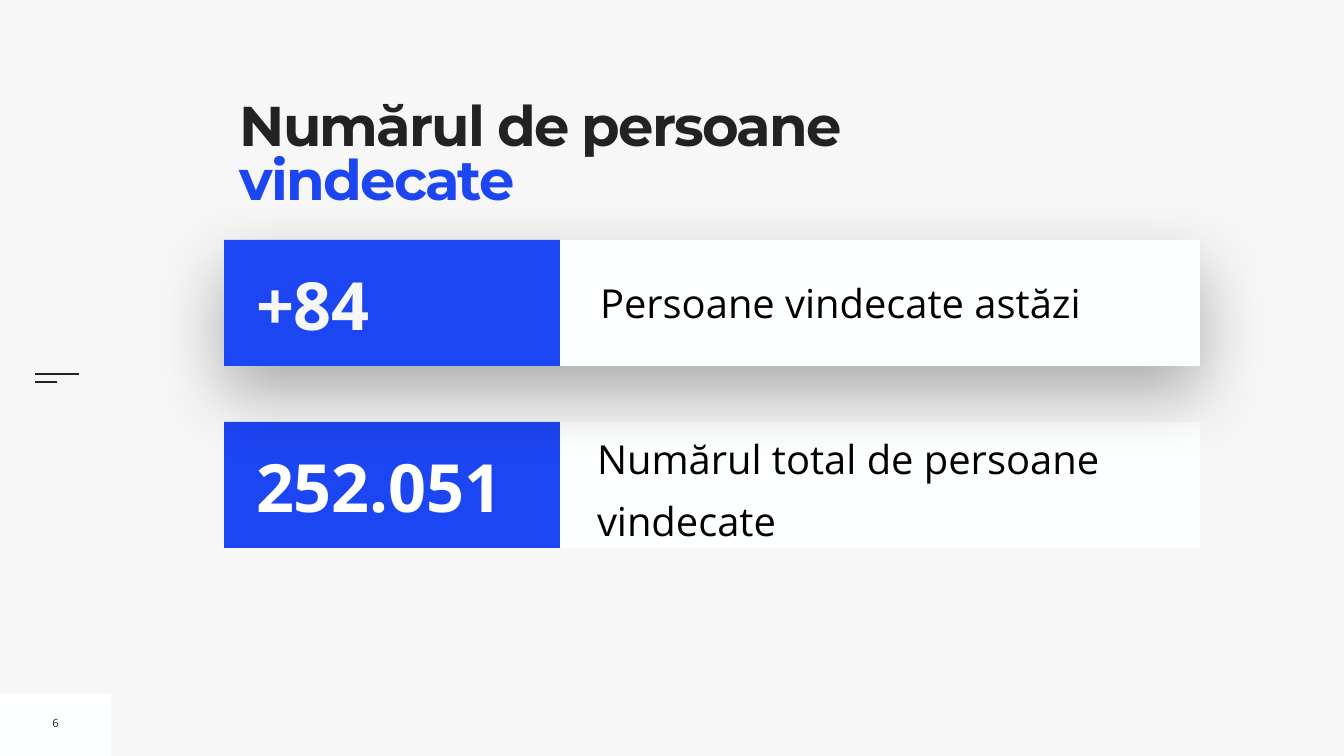
"""Builds the slide with the number of recovered people."""
from lxml.etree import SubElement
from pptx import Presentation
from pptx.dml.color import RGBColor
from pptx.enum.shapes import MSO_CONNECTOR, MSO_SHAPE
from pptx.enum.text import MSO_ANCHOR, PP_ALIGN
from pptx.oxml.ns import qn
from pptx.util import Pt

PX = 914400 / 50.4
PAPER, WHITE, INK, BLUE = "F7F7F7", "FEFFFF", "222222", "1D46F3"
TITLE = [("Numărul de persoane ", INK), ("vindecate", BLUE)]
PAGE_NUMBER = "6"
MENU_LINES = [(374, 44), (382, 22)]
CARDS = [
    {"top": 422, "count": "252.051", "count_color": "FFFFFF",
     "label": "Numărul total de persoane vindecate",
     "label_box": (597, 423, 602, 119), "inset": 0,
     "spacing": 1.3, "before": 20, "raised": False},
    {"top": 240, "count": "+84", "count_color": PAPER,
     "label": "Persoane vindecate astăzi",
     "label_box": (595, 274, 593, 58), "inset": 5,
     "spacing": 1, "before": 0, "raised": True},
]
CARD_LEFT, CARD_WIDTH, CARD_HEIGHT, COUNT_WIDTH = 224, 976, 126, 336


def px(*lengths):
    return [round(length * PX) for length in lengths]


def color(value):
    return RGBColor.from_string(value)


def add_panel(shapes, box, fill):
    panel = shapes.add_shape(MSO_SHAPE.RECTANGLE, *px(*box))
    panel.shadow.inherit = False
    panel.fill.solid()
    panel.fill.fore_color.rgb = color(fill)
    panel.line.fill.background()
    return panel


def add_text(shapes, box, runs, size, font="Open Sans", bold=False, inset=5,
             anchor=MSO_ANCHOR.MIDDLE, align=PP_ALIGN.LEFT, wrap=True,
             spacing=1, before=0, tracking=None):
    holder = shapes.add_textbox(*px(*box))
    frame = holder.text_frame
    frame.word_wrap = wrap
    frame.vertical_anchor = anchor
    frame.margin_left, frame.margin_top, frame.margin_right, frame.margin_bottom = px(*[inset] * 4)
    paragraph = frame.paragraphs[0]
    paragraph.alignment = align
    paragraph.line_spacing = spacing
    paragraph.space_before = Pt(before)
    for words, ink in runs:
        run = paragraph.add_run()
        run.text = words
        run.font.name = font
        run.font.size = Pt(size)
        run.font.bold = bold
        run.font.color.rgb = color(ink)
        if tracking:
            run.font._element.set("spc", str(round(tracking * 100)))
    return holder


def raise_panel(panel):
    effects = panel._element.spPr.find(qn("a:effectLst"))
    shadow = SubElement(effects, qn("a:outerShdw"), blurRad=str(Pt(100)),
                        dist=str(Pt(40)), dir="5400000", algn="ctr", rotWithShape="0")
    tint = SubElement(shadow, qn("a:srgbClr"), val="000000")
    SubElement(tint, qn("a:alpha"), val="30000")


def add_menu_line(shapes, top, width):
    line = shapes.add_connector(MSO_CONNECTOR.STRAIGHT, *px(35, top, 35 + width, top))
    line.line.color.rgb = color(INK)
    line.line.width = Pt(3)
    SubElement(line._element.spPr, qn("a:effectLst"))


def add_card(shapes, card):
    parts = shapes.add_group_shape().shapes
    top = card["top"]
    panel = add_panel(parts, (CARD_LEFT, top, CARD_WIDTH, CARD_HEIGHT), WHITE)
    if card["raised"]:
        raise_panel(panel)
    add_text(parts, card["label_box"], [(card["label"], "000000")], 57,
             inset=card["inset"], spacing=card["spacing"], before=card["before"])
    add_panel(parts, (CARD_LEFT, top, COUNT_WIDTH, CARD_HEIGHT), BLUE)
    add_text(parts, (251, top + 18, 304, 91),
             [(card["count"], card["count_color"])], 95, bold=True)


def main():
    deck = Presentation()
    deck.slide_width, deck.slide_height = px(1344, 756)
    slide = deck.slides.add_slide(deck.slide_layouts[6])
    slide.background.fill.solid()
    slide.background.fill.fore_color.rgb = color(PAPER)
    shapes = slide.shapes
    add_panel(shapes, (0, 694, 111, 62), WHITE)
    for top, width in MENU_LINES:
        add_menu_line(shapes, top, width)
    title = add_text(shapes, (240, 104, 656, 138), TITLE, 80, font="Montserrat", bold=True,
                     inset=0, anchor=MSO_ANCHOR.TOP, spacing=0.8, tracking=-2.7)
    title.fill.solid()
    title.fill.fore_color.rgb = color(PAPER)
    add_text(shapes, (47, 710, 17, 26), [(PAGE_NUMBER, INK)], 16,
             align=PP_ALIGN.CENTER, wrap=False)
    for card in CARDS:
        add_card(shapes, card)
    deck.save("out.pptx")


if __name__ == "__main__":
    main()
